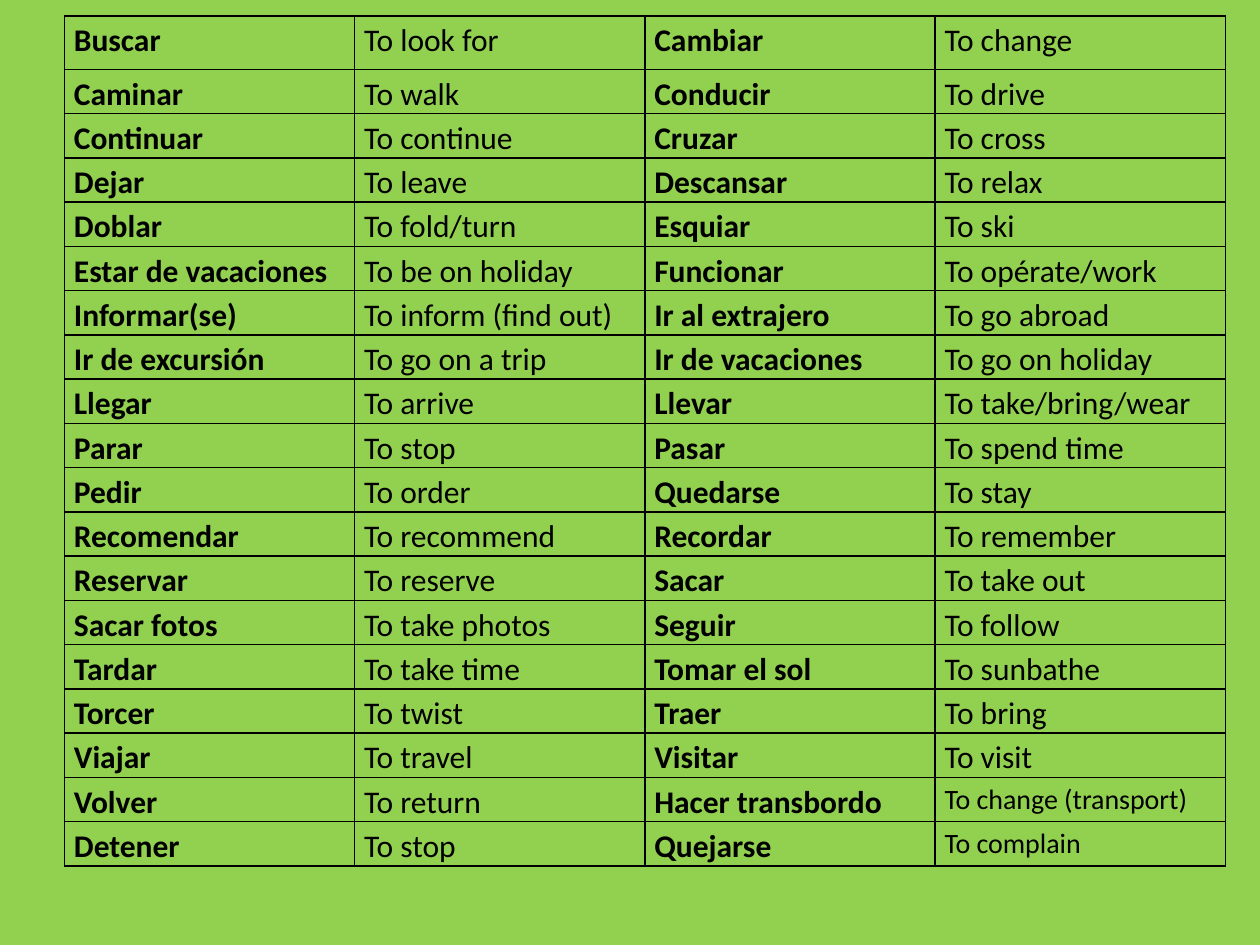
from lxml import etree
from pptx import Presentation
from pptx.dml.color import RGBColor
from pptx.oxml.ns import qn
from pptx.util import Cm, Pt

BLANK = 6

# Spanish verb, meaning, Spanish verb, meaning
VERBS = [
    ("Buscar", "To look for", "Cambiar", "To change"),
    ("Caminar", "To walk", "Conducir", "To drive"),
    ("Continuar", "To continue", "Cruzar", "To cross"),
    ("Dejar", "To leave", "Descansar", "To relax"),
    ("Doblar", "To fold/turn", "Esquiar", "To ski"),
    ("Estar de vacaciones", "To be on holiday", "Funcionar", "To opérate/work"),
    ("Informar(se)", "To inform (find out)", "Ir al extrajero", "To go abroad"),
    ("Ir de excursión", "To go on a trip", "Ir de vacaciones", "To go on holiday"),
    ("Llegar", "To arrive", "Llevar", "To take/bring/wear"),
    ("Parar", "To stop", "Pasar", "To spend time"),
    ("Pedir", "To order", "Quedarse", "To stay"),
    ("Recomendar", "To recommend", "Recordar", "To remember"),
    ("Reservar", "To reserve", "Sacar", "To take out"),
    ("Sacar fotos", "To take photos", "Seguir", "To follow"),
    ("Tardar", "To take time", "Tomar el sol", "To sunbathe"),
    ("Torcer", "To twist", "Traer", "To bring"),
    ("Viajar", "To travel", "Visitar", "To visit"),
    ("Volver", "To return", "Hacer transbordo", "To change (transport)"),
    ("Detener", "To stop", "Quejarse", "To complain"),
]
SMALL = {"To change (transport)", "To complain"}


def color(code):
    return RGBColor.from_string(code)


class Deck:
    font = "Calibri"
    ink = "000000"
    back = "92D050"

    def __init__(self, deck):
        self.slide = deck.slides.add_slide(deck.slide_layouts[BLANK])
        fill = self.slide.background.fill
        fill.solid()
        fill.fore_color.rgb = color(self.back)

    def border(self, cell):
        props = cell._tc.get_or_add_tcPr()
        for side in ("a:lnL", "a:lnR", "a:lnT", "a:lnB"):
            line = etree.SubElement(props, qn(side), w=str(Pt(1)))
            fill = etree.SubElement(line, qn("a:solidFill"))
            etree.SubElement(fill, qn("a:srgbClr"), val=self.ink)

    def label(self, cell, text, size, bold):
        cell.margin_left = cell.margin_right = Cm(0.19)
        cell.margin_top = cell.margin_bottom = 0
        para = cell.text_frame.paragraphs[0]
        para.line_spacing = 1.15
        run = para.add_run()
        run.text = text
        run.font.name = self.font
        run.font.size = Pt(size)
        run.font.bold = bold
        run.font.color.rgb = color(self.ink)

    def table(self, rows, left, top, wide, first, high):
        count = len(rows)
        total = first + high * (count - 1)
        grid = self.slide.shapes.add_table(
            count, len(rows[0]), Cm(left), Cm(top), Cm(wide), Cm(total)).table
        grid.first_row = grid.horz_banding = False
        for r, row in enumerate(rows):
            grid.rows[r].height = Cm(high if r else first)
            for c, text in enumerate(row):
                cell = grid.cell(r, c)
                self.border(cell)
                cell.fill.background()
                # Verbs stand in the even columns
                self.label(cell, text, 16 if text in SMALL else 18, c % 2 == 0)


def main():
    deck = Presentation()
    deck.slide_width, deck.slide_height = Cm(25.4), Cm(19.05)
    page = Deck(deck)
    # Verb list
    page.table(VERBS, left=1.3, top=0.32, wide=23.4, first=1.08, high=0.89)
    deck.save("out.pptx")


if __name__ == "__main__":
    main()
